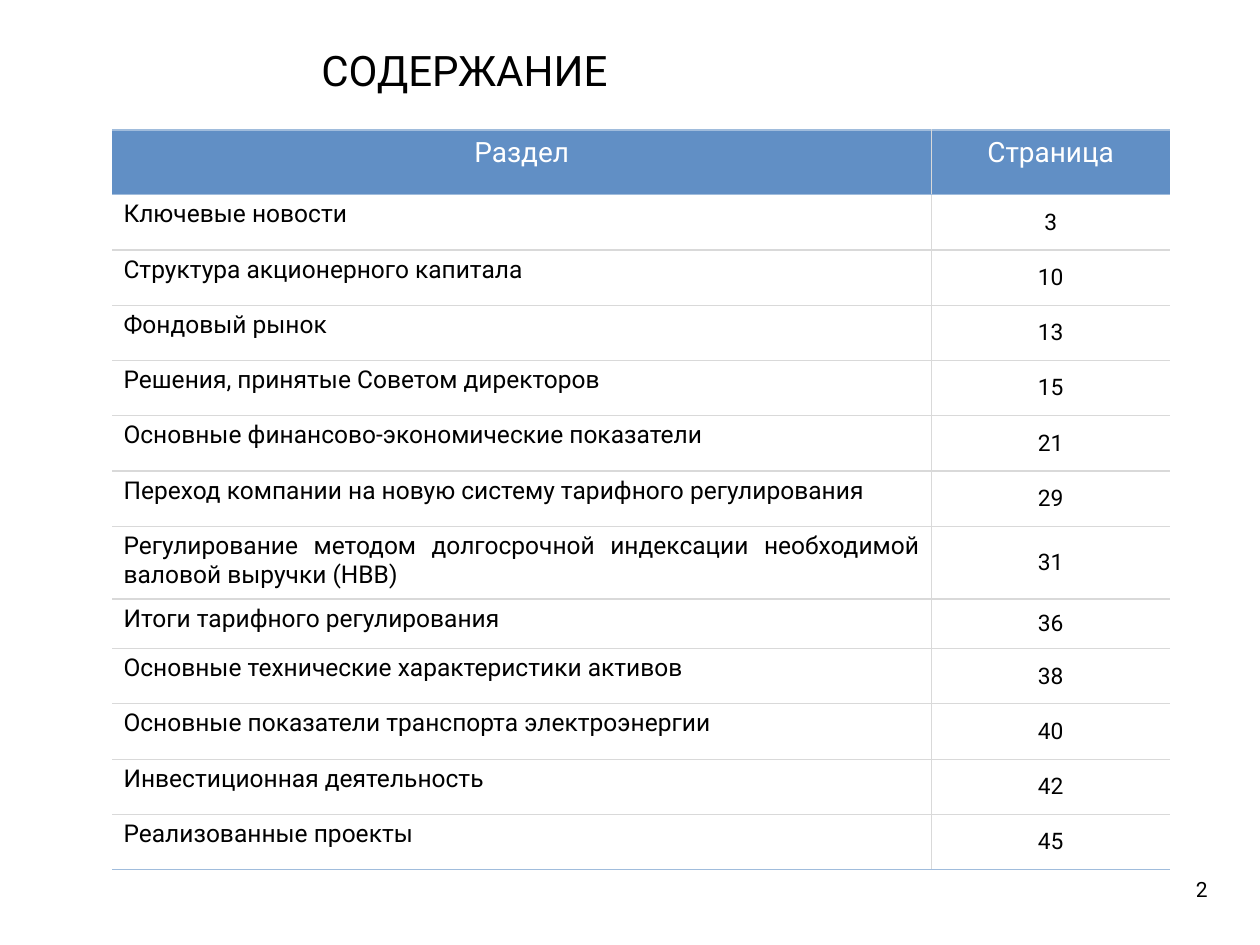
from dataclasses import dataclass

from lxml import etree
from pptx import Presentation
from pptx.dml.color import RGBColor
from pptx.enum.text import MSO_ANCHOR, PP_ALIGN
from pptx.oxml.ns import qn
from pptx.util import Pt

CENTER, JUSTIFY, LEFT = PP_ALIGN.CENTER, PP_ALIGN.JUSTIFY, PP_ALIGN.LEFT
TOP, MIDDLE, BOTTOM = MSO_ANCHOR.TOP, MSO_ANCHOR.MIDDLE, MSO_ANCHOR.BOTTOM

TITLE = "СОДЕРЖАНИЕ"
SLIDE_NUMBER = "2"
HEADERS = ("Раздел", "Страница")
SECTIONS = [
    ("Ключевые новости", "3"),
    ("Структура акционерного капитала", "10"),
    ("Фондовый рынок", "13"),
    ("Решения, принятые Советом директоров", "15"),
    ("Основные финансово-экономические показатели", "21"),
    ("Переход компании на новую систему тарифного регулирования", "29"),
    ("Регулирование методом долгосрочной индексации необходимой валовой выручки (НВВ)", "31"),
    ("Итоги тарифного регулирования", "36"),
    ("Основные технические характеристики активов", "38"),
    ("Основные показатели транспорта электроэнергии", "40"),
    ("Инвестиционная деятельность", "42"),
    ("Реализованные проекты", "45"),
]
TABLE_LEFT, TABLE_TOP = 64, 74.3
COLUMN_WIDTHS = (468.2, 136.3)
HEADER_HEIGHT, ROW_HEIGHT = 37, 31.6
SPECIAL_HEIGHTS = {7: 41.5, 8: 28.4}


@dataclass(frozen=True)
class Theme:
    """Colours and type sizes of the slide."""

    font: str = "Roboto"
    text: str = "000000"
    header_text: str = "FFFFFF"
    header_fill: str = "618FC5"
    accent_line: str = "A0BCDC"
    grid_line: str = "D9D9D9"
    title_size: float = 24
    header_size: float = 16
    section_size: float = 14
    page_size: float = 13
    number_size: float = 12


THEME = Theme()


def write_text(text_frame, text, size, color, alignment):
    """Fill a text frame with one formatted paragraph."""
    text_frame.text = text
    paragraph = text_frame.paragraphs[0]
    paragraph.alignment = alignment
    font = paragraph.runs[0].font
    font.name, font.size = THEME.font, Pt(size)
    font.color.rgb = RGBColor.from_string(color)


def add_label(slide, box, text, size, anchor, wrap):
    """Add a text box with narrow margins."""
    text_frame = slide.shapes.add_textbox(*map(Pt, box)).text_frame
    text_frame.margin_left = text_frame.margin_right = Pt(3.6)
    text_frame.margin_top = text_frame.margin_bottom = Pt(3.6)
    text_frame.vertical_anchor, text_frame.word_wrap = anchor, wrap
    write_text(text_frame, text, size, THEME.text, LEFT)


def set_borders(cell, borders):
    """Draw the four cell borders, leaving out those without a colour."""
    properties = cell._tc.get_or_add_tcPr()
    for position, (side, color, width) in enumerate(borders):
        line = etree.Element(qn(f"a:ln{side}"), w=str(Pt(width)))
        if color:
            fill = etree.SubElement(line, qn("a:solidFill"))
            etree.SubElement(fill, qn("a:srgbClr"), val=color)
        else:
            etree.SubElement(line, qn("a:noFill"))
        properties.insert(position, line)


def format_cell(cell, text, row, column):
    """Write and style one cell according to its row and column."""
    is_header, is_last = row == 0, row == len(SECTIONS)
    margin = 3.6 if is_header else 3
    cell.margin_left = cell.margin_right = Pt(6.6)
    cell.margin_top = cell.margin_bottom = Pt(margin)
    if is_header:
        cell.fill.solid()
        cell.fill.fore_color.rgb = RGBColor.from_string(THEME.header_fill)
        size, color, alignment = THEME.header_size, THEME.header_text, CENTER
    else:
        cell.fill.background()
        size = (THEME.section_size, THEME.page_size)[column]
        color, alignment = THEME.text, (JUSTIFY, CENTER)[column]
    cell.vertical_anchor = MIDDLE if column and not is_header else TOP
    write_text(cell.text_frame, text, size, color, alignment)
    set_borders(cell, (
        ("L", THEME.grid_line if column else None, 0.75),
        ("R", None if column else THEME.grid_line, 0.75),
        ("T", THEME.accent_line if row < 2 else THEME.grid_line, 0.75),
        ("B", THEME.accent_line if is_header or is_last else THEME.grid_line,
         1 if is_last else 0.75),
    ))


def add_contents(slide):
    """Add the table of sections and page numbers."""
    rows = [HEADERS, *SECTIONS]
    heights = [SPECIAL_HEIGHTS.get(row, ROW_HEIGHT) if row else HEADER_HEIGHT
               for row in range(len(rows))]
    box = (TABLE_LEFT, TABLE_TOP, sum(COLUMN_WIDTHS), sum(heights))
    table = slide.shapes.add_table(len(rows), len(HEADERS), *map(Pt, box)).table
    table.first_row = table.horz_banding = False
    for column, width in zip(table.columns, COLUMN_WIDTHS):
        column.width = Pt(width)
    for row, (texts, height) in enumerate(zip(rows, heights)):
        table.rows[row].height = Pt(height)
        for column, text in enumerate(texts):
            format_cell(table.cell(row, column), text, row, column)


def main():
    """Build the contents slide."""
    presentation = Presentation()
    presentation.slide_width, presentation.slide_height = Pt(720), Pt(540)
    slide = presentation.slides.add_slide(presentation.slide_layouts[6])
    add_contents(slide)
    add_label(slide, (679.7, 497.5, 13.7, 21.6), SLIDE_NUMBER, THEME.number_size, BOTTOM, False)
    add_label(slide, (180, 21.6, 432, 34.6), TITLE, THEME.title_size, TOP, True)
    presentation.save("out.pptx")


if __name__ == "__main__":
    main()
